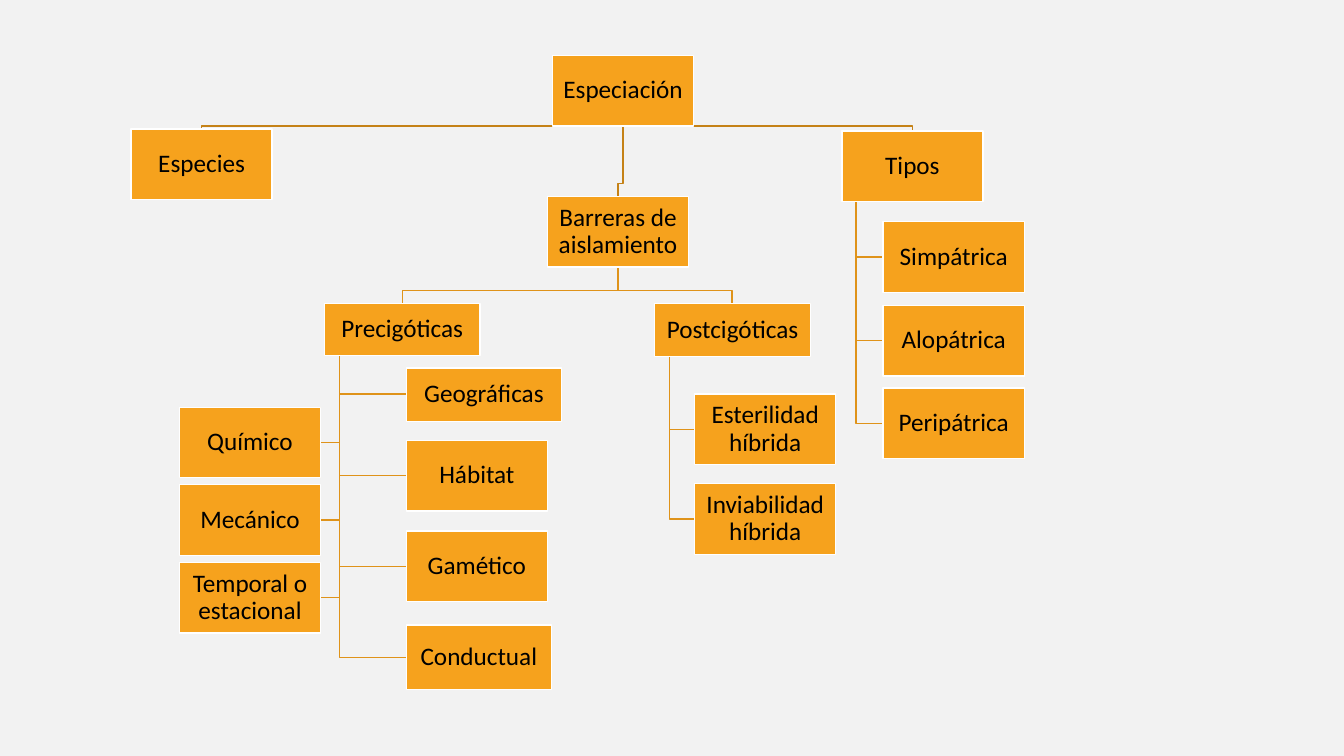
from dataclasses import dataclass

from pptx import Presentation
from pptx import util as u
from pptx.dml.color import RGBColor
from pptx.enum import shapes, text

PX = 9144


@dataclass(frozen=True)
class Theme:
    background: str = "F2F2F2"
    box: str = "F6A21D"
    border: str = "FFFFFF"
    ink: str = "000000"
    main_branch: str = "C58217"
    branch: str = "DF931A"
    font: str = "Calibri"
    label_size: int = 18
    line_width: int = 1


@dataclass(frozen=True)
class Concept:
    label: str
    left: int
    top: int
    width: int = 140
    height: int = 70

    @property
    def right(self):
        return self.left + self.width

    @property
    def bottom(self):
        return self.top + self.height

    @property
    def center(self):
        return self.left + self.width // 2

    @property
    def middle(self):
        return self.top + self.height // 2


THEME = Theme()
BEND_ABOVE_CHILD = 13

SPECIATION = Concept("Especiación", 548, 55)
SPECIES = Concept("Especies", 130, 128)
BARRIERS = Concept("Barreras de aislamiento", 543, 195)
PREZYGOTIC = Concept("Precigóticas", 322, 301, 154, 52)
POSTZYGOTIC = Concept("Postcigóticas", 649, 301, 155, 53)
TYPES = Concept("Tipos", 835, 130)

SPREAD = [
    (SPECIATION, [SPECIES, BARRIERS, TYPES], THEME.main_branch),
    (BARRIERS, [PREZYGOTIC, POSTZYGOTIC], THEME.branch),
]

HANGING = [
    (PREZYGOTIC, [
        Concept("Geográficas", 403, 365, 154, 53),
        Concept("Hábitat", 403, 437),
        Concept("Gamético", 403, 527),
        Concept("Conductual", 403, 620, 144, 64),
        Concept("Químico", 178, 404),
        Concept("Mecánico", 178, 481),
        Concept("Temporal o estacional", 178, 558),
    ]),
    (POSTZYGOTIC, [
        Concept("Esterilidad híbrida", 689, 391),
        Concept("Inviabilidad híbrida", 689, 480),
    ]),
    (TYPES, [
        Concept("Simpátrica", 876, 220),
        Concept("Alopátrica", 876, 303),
        Concept("Peripátrica", 876, 385),
    ]),
]


def rgb(color):
    return RGBColor.from_string(color)


def style_line(shape, color):
    shape.shadow.inherit = False
    shape.line.color.rgb = rgb(color)
    shape.line.width = u.Pt(THEME.line_width)


def add_branch(slide, points, color):
    builder = slide.shapes.build_freeform(*points[0], scale=PX)
    builder.add_line_segments(points[1:], close=False)
    branch = builder.convert_to_shape()
    branch.fill.background()
    style_line(branch, color)


def add_spread_branch(slide, parent, child, color):
    bend = max(parent.bottom, child.top - BEND_ABOVE_CHILD)
    add_branch(slide, [
        (parent.center, parent.bottom),
        (parent.center, bend),
        (child.center, bend),
        (child.center, child.top),
    ], color)


def add_hanging_branch(slide, parent, child):
    stem = parent.left + parent.width // 10
    near_side = child.left if child.left > stem else child.right
    add_branch(slide, [
        (stem, parent.bottom),
        (stem, child.middle),
        (near_side, child.middle),
    ], THEME.branch)


def add_concept(slide, concept):
    box = slide.shapes.add_shape(
        shapes.MSO_SHAPE.RECTANGLE,
        concept.left * PX, concept.top * PX,
        concept.width * PX, concept.height * PX)
    box.fill.solid()
    box.fill.fore_color.rgb = rgb(THEME.box)
    style_line(box, THEME.border)
    frame = box.text_frame
    frame.word_wrap = True
    frame.vertical_anchor = text.MSO_ANCHOR.MIDDLE
    frame.margin_left = frame.margin_right = PX
    frame.margin_top = frame.margin_bottom = PX
    paragraph = frame.paragraphs[0]
    paragraph.alignment = text.PP_ALIGN.CENTER
    paragraph.line_spacing = 0.9
    run = paragraph.add_run()
    run.text = concept.label
    run.font.name = THEME.font
    run.font.size = u.Pt(THEME.label_size)
    run.font.color.rgb = rgb(THEME.ink)


def main():
    deck = Presentation()
    deck.slide_width = 1333 * PX
    deck.slide_height = 750 * PX
    slide = deck.slides.add_slide(deck.slide_layouts[6])
    slide.background.fill.solid()
    slide.background.fill.fore_color.rgb = rgb(THEME.background)

    concepts = [SPECIATION]
    for parent, children in HANGING:
        for child in children:
            add_hanging_branch(slide, parent, child)
    for parent, children, color in SPREAD:
        concepts += children
        for child in children:
            add_spread_branch(slide, parent, child, color)
    for _, children in HANGING:
        concepts += children
    for concept in concepts:
        add_concept(slide, concept)

    deck.save("out.pptx")


if __name__ == "__main__":
    main()
